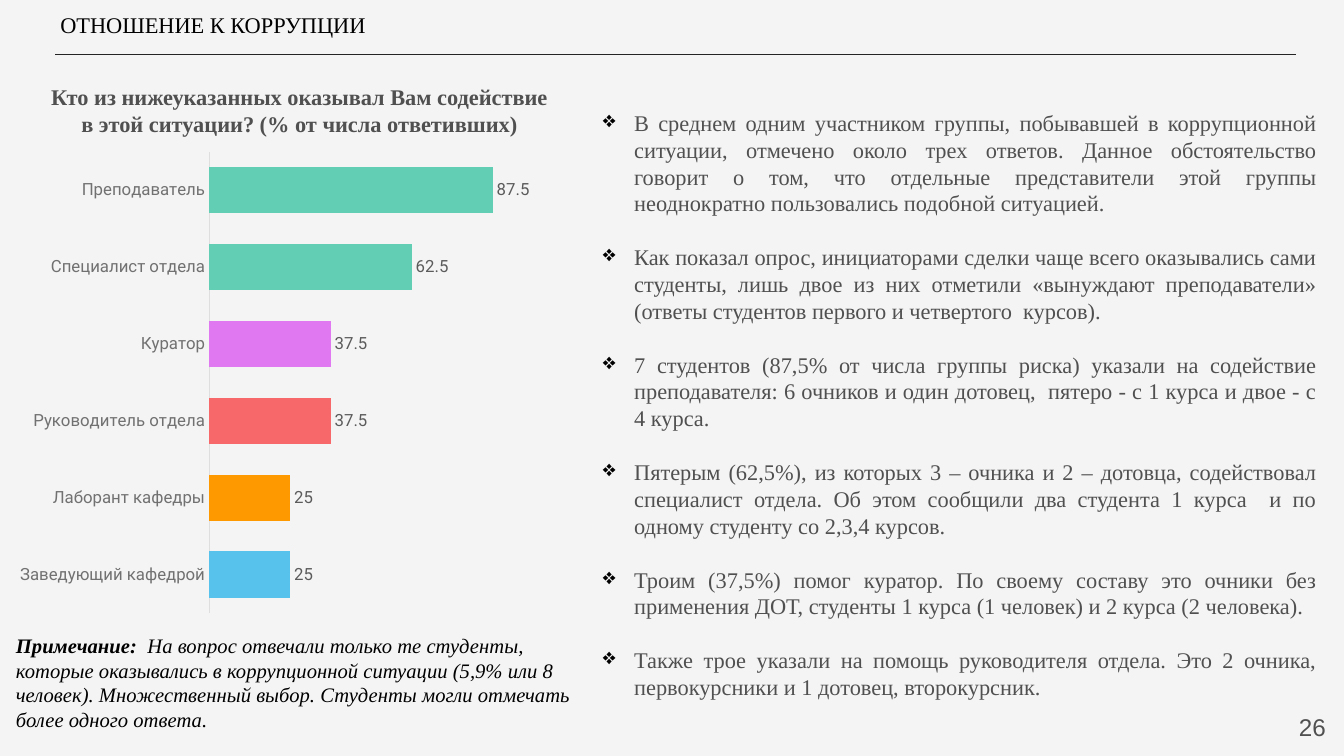
from pptx import Presentation
from pptx.chart.data import CategoryChartData as Data
from pptx.dml.color import RGBColor as RGB
from pptx.enum.chart import XL_CHART_TYPE as Kind, XL_LABEL_POSITION as Pos, XL_TICK_MARK as Tick
from pptx.enum.shapes import MSO_CONNECTOR as Conn
from pptx.enum.text import MSO_ANCHOR as Anchor, PP_ALIGN as Align
from pptx.oxml import parse_xml
from pptx.oxml.ns import nsdecls, qn
from pptx.util import Inches, Pt

# Grid of 100 columns by 100 rows
WIDE, HIGH = Inches(13.33), Inches(7.5)
COL, ROW = WIDE / 100, HIGH / 100

PAGE = RGB(0xF4, 0xF4, 0xF4)
BLACK = RGB(0, 0, 0)
INK = RGB(0x24, 0x24, 0x24)
GREY = RGB(0x50, 0x50, 0x50)
LABEL = RGB(0x5B, 0x5B, 0x5B)
NAME = RGB(0x71, 0x71, 0x71)
AXIS = RGB(0xDE, 0xDE, 0xDE)
GREEN = RGB(0x62, 0xCF, 0xB5)
PINK = RGB(0xE0, 0x78, 0xF1)
RED = RGB(0xF7, 0x68, 0x6B)
AMBER = RGB(0xFF, 0x99, 0x00)
BLUE = RGB(0x57, 0xC2, 0xEC)
SERIF = "Times New Roman"

BARS = [
    ("Заведующий кафедрой", 25, BLUE),
    ("Лаборант кафедры", 25, AMBER),
    ("Руководитель отдела", 37.5, RED),
    ("Куратор", 37.5, PINK),
    ("Специалист отдела", 62.5, GREEN),
    ("Преподаватель", 87.5, GREEN),
]
NOTE = ("На вопрос отвечали только те студенты, которые оказывались в коррупционной "
        "ситуации (5,9% или 8 человек). Множественный выбор. Студенты могли отмечать "
        "более одного ответа.")
POINTS = [
    "В среднем одним участником группы, побывавшей в коррупционной ситуации, отмечено "
    "около трех ответов. Данное обстоятельство говорит о том, что отдельные представители "
    "этой группы неоднократно пользовались подобной ситуацией.",
    "Как показал опрос, инициаторами сделки чаще всего оказывались сами студенты, лишь "
    "двое из них отметили «вынуждают преподаватели» (ответы студентов первого и "
    "четвертого  курсов).",
    "7 студентов (87,5% от числа группы риска) указали на содействие преподавателя: "
    "6 очников и один дотовец,  пятеро - с 1 курса и двое - с 4 курса.",
    "Пятерым (62,5%), из которых 3 – очника и 2 – дотовца, содействовал специалист "
    "отдела. Об этом сообщили два студента 1 курса  и по одному студенту со 2,3,4 курсов.",
    "Троим (37,5%) помог куратор. По своему составу это очники без применения ДОТ, "
    "студенты 1 курса (1 человек) и 2 курса (2 человека).",
    "Также трое указали на помощь руководителя отдела. Это 2 очника, первокурсники и "
    "1 дотовец, второкурсник.",
]


def place(box, x, y, w, h):
    """Grid cell inside a region, as slide lengths."""
    return (round((box[0] + x) * COL), round((box[1] + y) * ROW),
            round(w * COL), round(h * ROW))


def style(font, size, color, face, bold=False, slant=False):
    font.size, font.name = Pt(size), face
    font.bold, font.italic = bold, slant
    font.color.rgb = color


def write(slide, area, lines, size=16, color=BLACK, face=SERIF, bold=False, slant=False,
          lead="", align=Align.LEFT, pad=None, gap=0, mark=None, anchor=Anchor.TOP):
    frame = slide.shapes.add_textbox(*area).text_frame
    frame.word_wrap, frame.vertical_anchor = True, anchor
    if pad is not None:
        frame.margin_left = frame.margin_right = Inches(pad)
        frame.margin_top = frame.margin_bottom = Inches(pad)
    for i, line in enumerate(lines):
        par = frame.add_paragraph() if i else frame.paragraphs[0]
        par.alignment, par.space_after = align, Pt(gap)
        if mark:
            bullet(par, mark)
        for text, heavy in ((lead, True), (line, bold)):
            if text:
                run = par.add_run()
                run.text = text
                style(run.font, size, color, face, heavy, slant)


def bullet(par, mark):
    props = par._p.get_or_add_pPr()
    props.set("marL", str(Inches(0.31)))
    props.set("indent", str(-Inches(0.31)))
    ns = nsdecls("a")
    props.append(parse_xml(f'<a:buClr {ns}><a:srgbClr val="{BLACK}"/></a:buClr>'))
    props.append(parse_xml(f'<a:buChar {ns} char="{mark}"/>'))


def header(slide, box):
    left, top, wide, _ = place(box, 0.38, 6.4, 92.27, 0)
    rule = slide.shapes.add_connector(Conn.STRAIGHT, left, top, left + wide, top)
    rule.line.color.rgb, rule.line.width = INK, Pt(0.75)
    rule._element.spPr.append(parse_xml(f'<a:effectLst {nsdecls("a")}/>'))
    write(slide, place(box, 0, 0, 92.5, 4.93), ["ОТНОШЕНИЕ К КОРРУПЦИИ"])


def survey(slide, box):
    write(slide, place(box, 1.05, 0, 42.46, 10.8),
          ["Кто из нижеуказанных оказывал Вам содействие",
           "в этой ситуации? (% от числа ответивших)"],
          color=GREY, bold=True, align=Align.CENTER, pad=0.13)
    graph(slide, place(box, 1.05, 10.67, 38.71, 61.73))
    write(slide, place(box, 0.45, 73.74, 43.51, 14.53), [NOTE],
          size=14.7, slant=True, lead="Примечание:  ")


def graph(slide, area):
    names, values, colors = zip(*BARS)
    data = Data()
    data.categories = names
    data.add_series("Series 1", values)
    chart = slide.shapes.add_chart(Kind.BAR_CLUSTERED, *area, data).chart
    chart.has_title = chart.has_legend = False
    style(chart.font, 10, INK, "Arial")

    # Axes
    cats, vals = chart.category_axis, chart.value_axis
    cats.major_tick_mark = cats.minor_tick_mark = Tick.NONE
    cats.format.line.color.rgb, cats.format.line.width = AXIS, Pt(0.75)
    style(cats.tick_labels.font, 12, NAME, "Roboto")
    vals.minimum_scale, vals.maximum_scale = 0, 100
    vals.has_major_gridlines = vals.visible = False

    # Bars and their labels
    plot = chart.plots[0]
    plot.gap_width, plot.vary_by_categories = 66, False
    bars = plot.series[0]
    bars.format.fill.solid()
    bars.format.fill.fore_color.rgb = GREEN
    for i, color in enumerate(colors):
        fill = bars.points[i].format.fill
        fill.solid()
        fill.fore_color.rgb = color
    tags = bars.data_labels
    tags.show_value, tags.position = True, Pos.OUTSIDE_END
    style(tags.font, 12, LABEL, "Roboto")

    # Inner plot area, as shares of the chart
    zone = chart.element.find(".//" + qn("c:plotArea"))
    for old in zone.findall(qn("c:layout")):
        zone.remove(old)
    parts = [("layoutTarget", "inner"), ("xMode", "edge"), ("yMode", "edge"),
             ("x", 0.375), ("y", 0), ("w", 0.623), ("h", 0.99)]
    inner = "".join(f'<c:{tag} val="{val}"/>' for tag, val in parts)
    zone.insert(0, parse_xml(f'<c:layout {nsdecls("c")}><c:manualLayout>{inner}'
                             '</c:manualLayout></c:layout>'))


def findings(slide, box):
    write(slide, place(box, 0, 0, 55.06, 82.67), POINTS, color=GREY,
          align=Align.JUSTIFY, pad=0.13, gap=19.2, mark="❖")


def footer(slide, box):
    write(slide, place(box, 0, 0, 6, 7.6), ["26"], size=17.3, color=GREY, face="Arial",
          align=Align.RIGHT, pad=0.13, anchor=Anchor.MIDDLE)


def main():
    deck = Presentation()
    deck.slide_width, deck.slide_height = WIDE, HIGH
    slide = deck.slides.add_slide(deck.slide_layouts[6])
    slide.background.fill.solid()
    slide.background.fill.fore_color.rgb = PAGE
    header(slide, (3.75, 0.8))
    survey(slide, (0, 9.33))
    findings(slide, (43.89, 12.67))
    footer(slide, (93.62, 92.4))
    deck.save("out.pptx")


if __name__ == "__main__":
    main()
